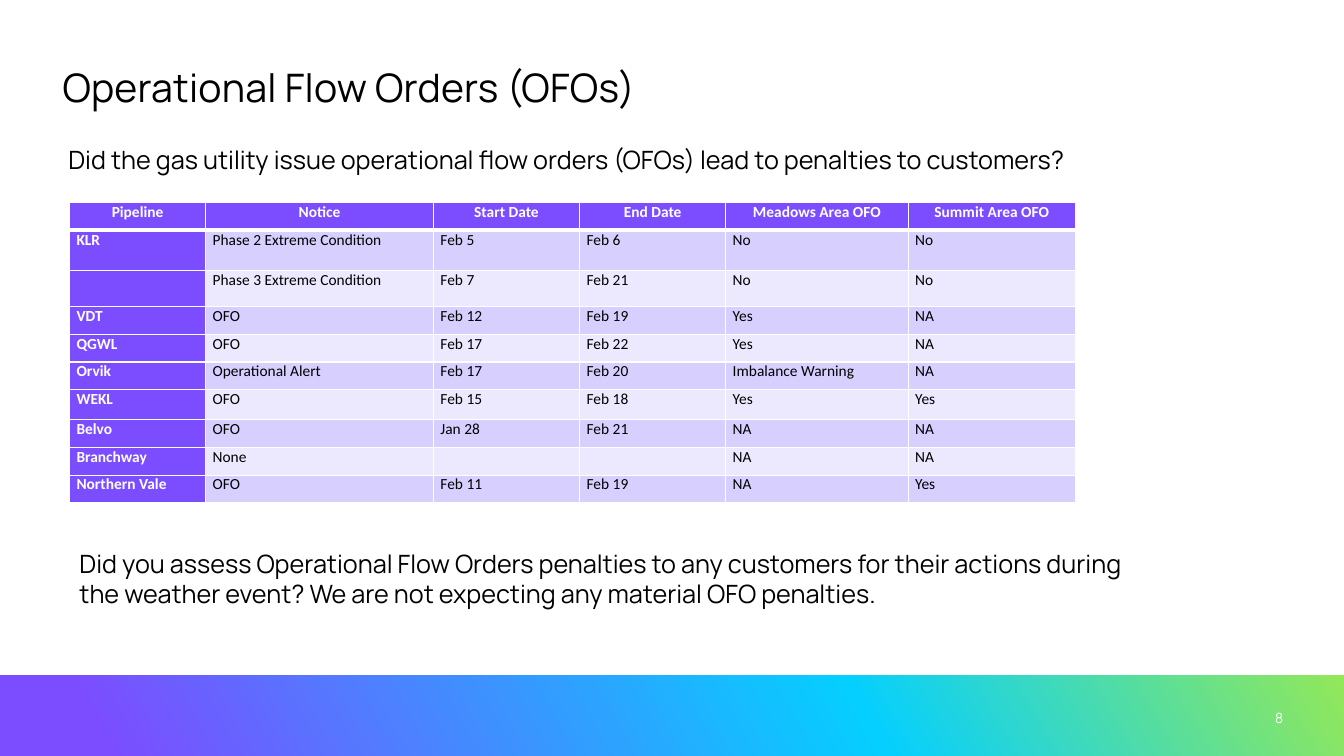
from copy import deepcopy
from dataclasses import dataclass

from lxml.etree import SubElement
from pptx import Presentation
from pptx.dml.color import RGBColor
from pptx.enum.shapes import MSO_SHAPE
from pptx.enum.text import MSO_ANCHOR, MSO_AUTO_SIZE, PP_ALIGN
from pptx.oxml import parse_xml
from pptx.oxml.ns import nsdecls, qn
from pptx.slide import Slide
from pptx.table import _Cell
from pptx.text.text import _Paragraph
from pptx.util import Pt


@dataclass(frozen=True)
class Theme:
    text_font: str = "Manrope"
    table_font: str = "Calibri"
    black: str = "000000"
    white: str = "FFFFFF"
    violet: str = "7C4DFF"
    bands: tuple[str, str] = ("D7D0FF", "ECE9FF")
    gradient: tuple[tuple[float, str], ...] = (
        (0.08, "7C4DFF"), (0.64, "05CFFF"), (1.0, "93E858"))
    title_size: float = 28
    question_size: float = 18
    table_size: float = 11
    number_size: float = 10


@dataclass(frozen=True)
class TextBox:
    text: str
    left: float
    top: float
    width: float
    height: float


THEME = Theme()

QUESTIONS = [
    TextBox("Did the gas utility issue operational flow orders (OFOs) lead to "
            "penalties to customers?", 41.76, 99.36, 844.56, 58.32),
    TextBox("Did you assess Operational Flow Orders penalties to any customers for "
            "their actions during the weather event? We are not expecting any "
            "material OFO penalties.", 49.68, 388.08, 775.44, 51.12),
]

COLUMN_WIDTHS = [97.2, 162.72, 104.4, 104.4, 130.32, 119.52]
ROW_HEIGHT = 19.8
TALL_ROWS = {1: 28.6, 2: 26, 6: 21.4}

ORDERS = [
    ["Pipeline", "Notice", "Start Date", "End Date", "Meadows Area OFO", "Summit Area OFO"],
    ["KLR", "Phase 2 Extreme Condition", "Feb 5", "Feb 6", "No", "No"],
    ["", "Phase 3 Extreme Condition", "Feb 7", "Feb 21", "No", "No"],
    ["VDT", "OFO", "Feb 12", "Feb 19", "Yes", "NA"],
    ["QGWL", "OFO", "Feb 17", "Feb 22", "Yes", "NA"],
    ["Orvik", "Operational Alert", "Feb 17", "Feb 20", "Imbalance Warning", "NA"],
    ["WEKL", "OFO", "Feb 15", "Feb 18", "Yes", "Yes"],
    ["Belvo", "OFO", "Jan 28", "Feb 21", "NA", "NA"],
    ["Branchway", "None", "", "", "NA", "NA"],
    ["Northern Vale", "OFO", "Feb 11", "Feb 19", "NA", "Yes"],
]


def set_font(paragraph: _Paragraph, name: str, size: float, color: str,
             bold: bool = False) -> None:
    font = paragraph.font
    font.name, font.size, font.bold = name, Pt(size), bold
    font.color.rgb = RGBColor.from_string(color)


def add_footer_band(slide: Slide) -> None:
    band = slide.shapes.add_shape(MSO_SHAPE.RECTANGLE, Pt(0), Pt(482.4), Pt(960), Pt(57.6))
    band.shadow.inherit = False
    band.line.fill.background()
    band.fill.gradient()
    band.fill.gradient_angle = 30
    # A new gradient has two stops; this one needs three
    stop_list = band._element.spPr.find(f".//{qn('a:gsLst')}")
    stop_list.append(deepcopy(stop_list[-1]))
    for stop, (position, color) in zip(band.fill.gradient_stops, THEME.gradient):
        stop.position = position
        stop.color.rgb = RGBColor.from_string(color)


def add_title(slide: Slide, text: str) -> None:
    title = slide.shapes.title
    title.left, title.top, title.width, title.height = Pt(41.76), Pt(41.76), Pt(555.84), Pt(87.12)
    frame = title.text_frame
    frame.text = text
    frame.word_wrap = True
    frame.auto_size = MSO_AUTO_SIZE.NONE
    frame.vertical_anchor = MSO_ANCHOR.TOP
    frame.margin_left = frame.margin_right = Pt(2.88)
    frame.margin_top = frame.margin_bottom = Pt(0)
    paragraph = frame.paragraphs[0]
    paragraph.alignment = PP_ALIGN.LEFT
    paragraph.line_spacing = 1.1
    set_font(paragraph, THEME.text_font, THEME.title_size, THEME.black)
    paragraph.runs[0]._r.get_or_add_rPr().set("spc", "20")


def add_text(slide: Slide, box: TextBox, size: float, color: str) -> _Paragraph:
    shape = slide.shapes.add_textbox(Pt(box.left), Pt(box.top), Pt(box.width), Pt(box.height))
    frame = shape.text_frame
    frame.text = box.text
    frame.word_wrap = True
    set_font(frame.paragraphs[0], THEME.text_font, size, color)
    return frame.paragraphs[0]


def add_slide_number(slide: Slide) -> None:
    box = TextBox("8", 877.68, 498.24, 38.88, 28.8)
    paragraph = add_text(slide, box, THEME.number_size, THEME.white)
    paragraph.alignment = PP_ALIGN.RIGHT
    frame = slide.shapes[-1].text_frame
    frame.vertical_anchor = MSO_ANCHOR.MIDDLE
    frame.margin_right = Pt(0)


def set_borders(cell: _Cell, bottom_width: float) -> None:
    properties = cell._tc.get_or_add_tcPr()
    for side, width in (("L", 1), ("R", 1), ("T", 1), ("B", bottom_width)):
        properties.append(parse_xml(
            f'<a:ln{side} {nsdecls("a")} w="{Pt(width)}"><a:solidFill>'
            f'<a:srgbClr val="{THEME.white}"/></a:solidFill></a:ln{side}>'))


def fill_cell(cell: _Cell, text: str, row: int, column: int) -> None:
    is_heading = row == 0 or column == 0
    set_borders(cell, 3 if row == 0 else 1)
    cell.fill.solid()
    fill_color = THEME.violet if is_heading else THEME.bands[(row - 1) % 2]
    cell.fill.fore_color.rgb = RGBColor.from_string(fill_color)
    cell.margin_left = cell.margin_right = Pt(5)
    cell.margin_top = cell.margin_bottom = Pt(0)
    cell.text = text
    paragraph = cell.text_frame.paragraphs[0]
    paragraph.alignment = PP_ALIGN.CENTER if row == 0 else PP_ALIGN.LEFT
    set_font(paragraph, THEME.table_font, THEME.table_size,
             THEME.white if is_heading else THEME.black, is_heading)
    if not text:
        # Keeps an empty cell from stretching its row
        SubElement(paragraph._p, qn("a:endParaRPr"), sz=str(THEME.table_size * 100))


def add_orders_table(slide: Slide) -> None:
    heights = [TALL_ROWS.get(row, ROW_HEIGHT) for row in range(len(ORDERS))]
    table = slide.shapes.add_table(
        len(ORDERS), len(COLUMN_WIDTHS), Pt(49.68), Pt(144.72),
        Pt(sum(COLUMN_WIDTHS)), Pt(sum(heights))).table
    table.horz_banding = False
    for column, width in zip(table.columns, COLUMN_WIDTHS):
        column.width = Pt(width)
    for row, (height, texts) in enumerate(zip(heights, ORDERS)):
        table.rows[row].height = Pt(height)
        for column, text in enumerate(texts):
            fill_cell(table.cell(row, column), text, row, column)


def main() -> None:
    presentation = Presentation()
    presentation.slide_width, presentation.slide_height = Pt(960), Pt(540)
    slide = presentation.slides.add_slide(presentation.slide_layouts[5])

    # Footer band and title
    add_footer_band(slide)
    add_title(slide, "Operational Flow Orders (OFOs)")
    add_slide_number(slide)

    # Orders by pipeline, with the questions above and below
    add_orders_table(slide)
    for question in QUESTIONS:
        add_text(slide, question, THEME.question_size, THEME.black)

    presentation.save("out.pptx")


if __name__ == "__main__":
    main()
